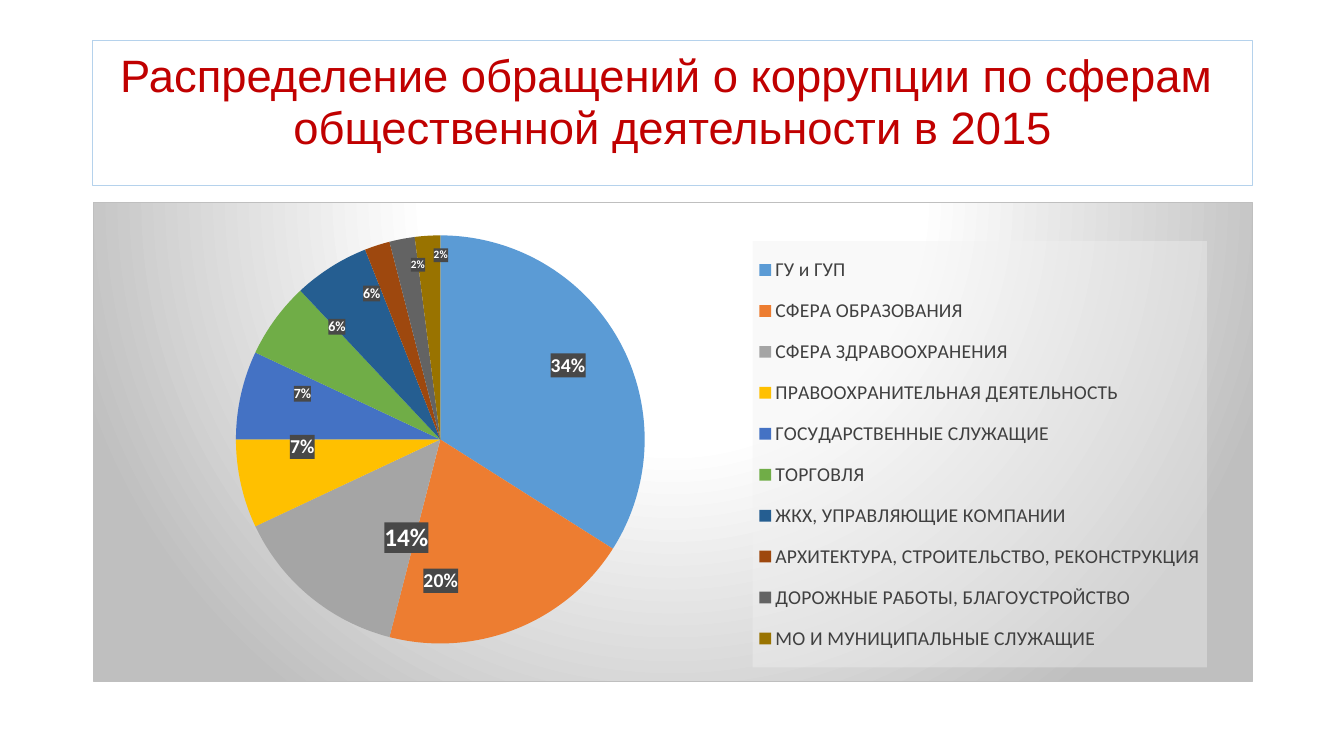
from dataclasses import dataclass
from math import cos, pi, sin

from pptx import Presentation
from pptx.chart.data import CategoryChartData
from pptx.dml.color import RGBColor
from pptx.enum.chart import XL_CHART_TYPE, XL_LEGEND_POSITION
from pptx.enum.shapes import MSO_SHAPE
from pptx.enum.text import MSO_ANCHOR, PP_ALIGN
from pptx.oxml import parse_xml
from pptx.oxml.ns import nsdecls, qn
from pptx.util import Inches, Pt

PIE = XL_CHART_TYPE.PIE
LEGEND_RIGHT = XL_LEGEND_POSITION.RIGHT
RECTANGLE = MSO_SHAPE.RECTANGLE
MIDDLE = MSO_ANCHOR.MIDDLE
CENTER = PP_ALIGN.CENTER

WHITE = RGBColor(0xFF, 0xFF, 0xFF)
BLACK = RGBColor(0x00, 0x00, 0x00)
TITLE_RED = RGBColor(0xC0, 0x00, 0x00)
TITLE_BORDER = RGBColor(0xB5, 0xD2, 0xEC)
CHART_GREY = RGBColor(0xBF, 0xBF, 0xBF)
LEGEND_TEXT = RGBColor(0x40, 0x40, 0x40)
LEGEND_FILL = RGBColor(0xF2, 0xF2, 0xF2)
LABEL_FILL = RGBColor(0x48, 0x48, 0x48)

SLIDE_W, SLIDE_H = Inches(13.33), Inches(7.5)
LEFT, WIDTH = 0.069, 0.863          # shares of the slide width
TITLE_TOP, TITLE_H = 0.053, 0.193   # shares of the slide height
CHART_TOP, CHART_H = 0.267, 0.635


@dataclass
class Area:
    """Left, top, width and height as shares of the chart."""
    x: float
    y: float
    w: float
    h: float


@dataclass
class Sphere:
    """A slice; the label centre is a share of the chart."""
    name: str
    percent: int
    color: RGBColor
    label_size: int = 0             # 0 means no label
    label_x: float = 0
    label_y: float = 0


PLOT = Area(0.123, 0.069, 0.353, 0.852)
LEGEND = Area(0.569, 0.081, 0.392, 0.89)

SPHERES = [
    Sphere("ГУ и ГУП", 34, RGBColor(0x5B, 0x9B, 0xD5), 14, 0.41, 0.34),
    Sphere("СФЕРА ОБРАЗОВАНИЯ", 20, RGBColor(0xED, 0x7D, 0x31), 14, 0.3, 0.79),
    Sphere("СФЕРА ЗДРАВООХРАНЕНИЯ", 14, RGBColor(0xA5, 0xA5, 0xA5), 18, 0.27, 0.7),
    Sphere("ПРАВООХРАНИТЕЛЬНАЯ ДЕЯТЕЛЬНОСТЬ", 7, RGBColor(0xFF, 0xC0, 0x00), 14, 0.18, 0.51),
    Sphere("ГОСУДАРСТВЕННЫЕ СЛУЖАЩИЕ", 7, RGBColor(0x44, 0x72, 0xC4), 10, 0.18, 0.4),
    Sphere("ТОРГОВЛЯ", 6, RGBColor(0x70, 0xAD, 0x47), 10, 0.21, 0.26),
    Sphere("ЖКХ, УПРАВЛЯЮЩИЕ КОМПАНИИ", 6, RGBColor(0x25, 0x5E, 0x91), 10, 0.24, 0.19),
    Sphere("АРХИТЕКТУРА, СТРОИТЕЛЬСТВО, РЕКОНСТРУКЦИЯ", 2, RGBColor(0x9E, 0x48, 0x0E), 8, 0.28, 0.13),
    Sphere("ДОРОЖНЫЕ РАБОТЫ, БЛАГОУСТРОЙСТВО", 2, RGBColor(0x63, 0x63, 0x63)),
    Sphere("МО И МУНИЦИПАЛЬНЫЕ СЛУЖАЩИЕ", 2, RGBColor(0x99, 0x73, 0x00), 8, 0.3, 0.11),
]


def write_text(frame, text: str, *, size: float, color: RGBColor, font: str, spacing: float) -> None:
    frame.word_wrap = True
    frame.vertical_anchor = MIDDLE
    paragraph = frame.paragraphs[0]
    paragraph.text = text
    paragraph.alignment = CENTER
    paragraph.line_spacing = spacing
    for run in paragraph.runs:
        run.font.size, run.font.name = Pt(size), font
        run.font.color.rgb = color


def set_font(font, size: float, color: RGBColor) -> None:
    font.size, font.name = Pt(size), "Calibri"
    font.color.rgb = color


def area_layout(area: Area, target: str):
    values = "".join(f'<c:{tag} val="{getattr(area, tag)}"/>' for tag in "xywh")
    return parse_xml(
        f'<c:layout {nsdecls("c")}><c:manualLayout>{target}<c:xMode val="edge"/>'
        f'<c:yMode val="edge"/>{values}</c:manualLayout></c:layout>')


def solid_fill(color: RGBColor, alpha: int = 100) -> str:
    return (f'<a:solidFill><a:srgbClr val="{color}"><a:alpha val="{alpha * 1000}"/>'
            '</a:srgbClr></a:solidFill>')


def shape_properties(fill: str, line: str = "<a:ln><a:noFill/></a:ln>"):
    return parse_xml(f'<c:spPr {nsdecls("c", "a")}>{fill}{line}</c:spPr>')


def label_xml(index: int, sphere: Sphere, middle: float) -> str:
    """Label of a slice, shifted from the middle of its radius."""
    if not sphere.label_size:
        return f'<c:dLbl><c:idx val="{index}"/><c:delete val="1"/></c:dLbl>'
    angle = 2 * pi * middle / 100
    dx = sphere.label_x - (PLOT.x + PLOT.w / 2 + PLOT.w / 4 * sin(angle))
    dy = sphere.label_y - (PLOT.y + PLOT.h / 2 - PLOT.h / 4 * cos(angle))
    return (
        f'<c:dLbl><c:idx val="{index}"/><c:layout><c:manualLayout>'
        f'<c:x val="{dx:.3f}"/><c:y val="{dy:.3f}"/></c:manualLayout></c:layout>'
        f'{label_format(sphere.label_size)}</c:dLbl>')


def label_format(size: int) -> str:
    shows = "".join(f'<c:show{part} val="{int(part == "Percent")}"/>' for part in
                    ("LegendKey", "Val", "CatName", "SerName", "Percent", "BubbleSize"))
    return (
        f'<c:numFmt formatCode="0%" sourceLinked="0"/><c:spPr>{solid_fill(LABEL_FILL)}</c:spPr>'
        f'<c:txPr><a:bodyPr lIns="0" tIns="0" rIns="0" bIns="0"/><a:p><a:pPr>'
        f'<a:defRPr sz="{size * 100}" b="1">{solid_fill(WHITE)}<a:latin typeface="Calibri"/>'
        f'</a:defRPr></a:pPr></a:p></c:txPr><c:dLblPos val="ctr"/>{shows}')


def add_title(slide) -> None:
    title = slide.shapes.add_shape(
        RECTANGLE, int(SLIDE_W * LEFT), int(SLIDE_H * TITLE_TOP),
        int(SLIDE_W * WIDTH), int(SLIDE_H * TITLE_H))
    title.shadow.inherit = False
    title.fill.background()
    title.line.color.rgb, title.line.width = TITLE_BORDER, Pt(0.75)
    title.text_frame.margin_bottom = Inches(0.25)
    write_text(title.text_frame,
               "Распределение обращений о коррупции по сферам \vобщественной деятельности в 2015",
               size=32.4, color=TITLE_RED, font="Arial", spacing=0.95)


def add_pie(slide) -> None:
    data = CategoryChartData()
    data.categories = [sphere.name for sphere in SPHERES]
    data.add_series("Series 1", [sphere.percent for sphere in SPHERES])
    chart = slide.shapes.add_chart(
        PIE, int(SLIDE_W * LEFT), int(SLIDE_H * CHART_TOP),
        int(SLIDE_W * WIDTH), int(SLIDE_H * CHART_H), data).chart
    chart.has_title = False
    set_font(chart.font, 10, BLACK)
    plot = chart.plots[0]
    plot.vary_by_categories = True
    series = plot.series[0]

    # Slices and their labels
    labels, start = "", 0
    for index, sphere in enumerate(SPHERES):
        fill = series.points[index].format.fill
        fill.solid()
        fill.fore_color.rgb = sphere.color
        labels += label_xml(index, sphere, start + sphere.percent / 2)
        start += sphere.percent
    series._element.find(qn("c:cat")).addprevious(parse_xml(
        f'<c:dLbls {nsdecls("c", "a")}>{labels}{label_format(10)}'
        '<c:showLeaderLines val="0"/></c:dLbls>'))

    # Plot position
    plot_area = chart._chartSpace.chart.plotArea
    for layout in plot_area.findall(qn("c:layout")):
        plot_area.remove(layout)
    plot_area.insert(0, area_layout(PLOT, '<c:layoutTarget val="inner"/>'))

    # Legend
    chart.has_legend = True
    legend = chart.legend
    legend.position = LEGEND_RIGHT
    legend.include_in_layout = False
    set_font(legend.font, 14, LEGEND_TEXT)
    legend_xml = legend._element
    for layout in legend_xml.findall(qn("c:layout")):
        legend_xml.remove(layout)
    legend_xml.find(qn("c:legendPos")).addnext(area_layout(LEGEND, ""))
    legend_xml.find(qn("c:txPr")).addprevious(shape_properties(solid_fill(LEGEND_FILL, 39)))

    # Background gradient and border
    stops = "".join(f'<a:gs pos="{share * 1000}"><a:srgbClr val="{color}"/></a:gs>'
                    for share, color in ((0, WHITE), (39, WHITE), (100, CHART_GREY)))
    gradient = (f'<a:gradFill><a:gsLst>{stops}</a:gsLst><a:path path="circle">'
                '<a:fillToRect l="50000" t="-80000" r="50000" b="180000"/></a:path></a:gradFill>')
    border = f'<a:ln w="{Pt(0.75)}">{solid_fill(CHART_GREY)}</a:ln>'
    chart._chartSpace.chart.addnext(shape_properties(gradient, border))


def main() -> None:
    presentation = Presentation()
    presentation.slide_width, presentation.slide_height = SLIDE_W, SLIDE_H
    slide = presentation.slides.add_slide(presentation.slide_layouts[6])
    add_title(slide)
    add_pie(slide)
    presentation.save("out.pptx")


if __name__ == "__main__":
    main()
